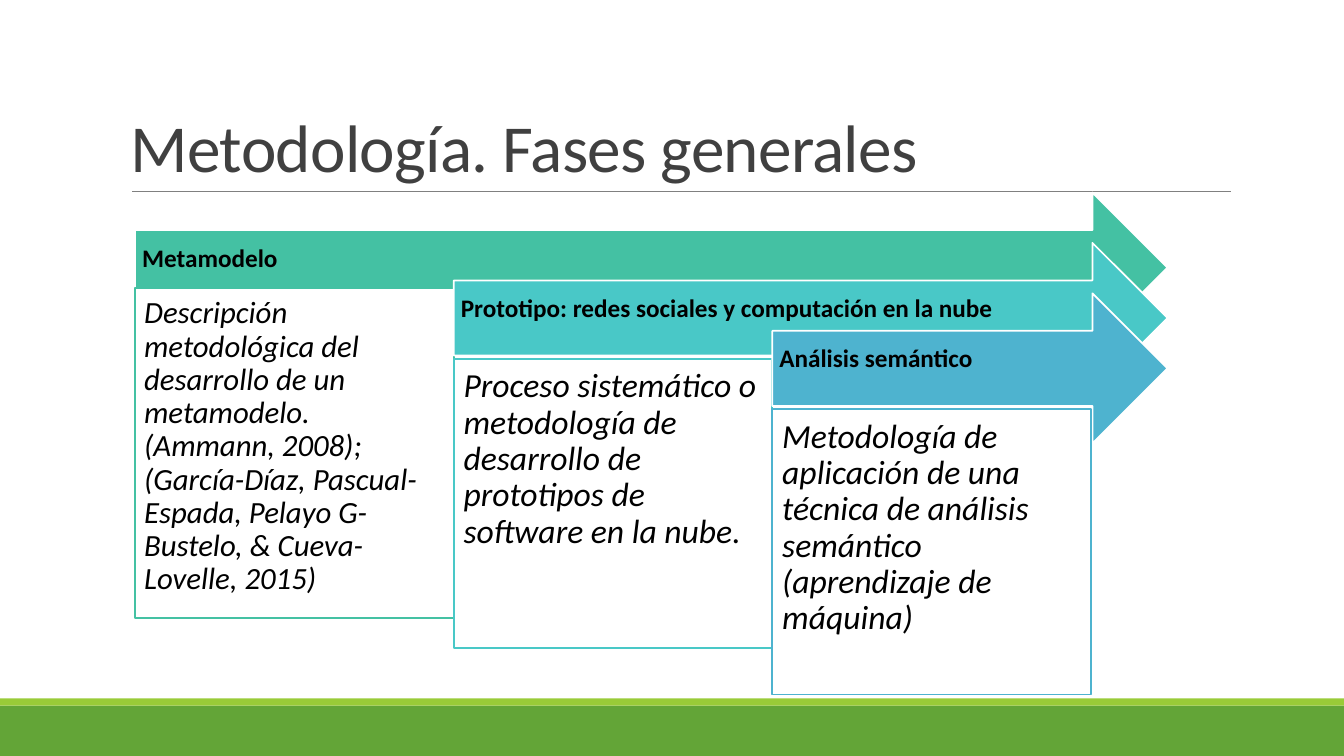
from dataclasses import dataclass

from lxml.etree import SubElement
from pptx import Presentation
from pptx.dml.color import RGBColor
from pptx.enum.shapes import MSO_CONNECTOR, MSO_SHAPE as Shape
from pptx.enum.text import MSO_ANCHOR as Anchor, PP_ALIGN as Align
from pptx.oxml.ns import qn
from pptx.util import Inches, Pt

WIDTH, HEIGHT = 13.33, 7.5
LEFT, COLUMN = 1.34, 3.16
TOP, ROW = 1.91, 0.5
ARROW_RIGHT, ARROW_HEIGHT = 11.58, 1.49


@dataclass
class Phase:
    name: str
    detail: str
    color: str
    box_drop: float
    box_height: float
    size: int = 24
    inset: float = 0.1


PHASES = [
    Phase("Metamodelo",
          "Descripción metodológica del desarrollo de un metamodelo. (Ammann, 2008); "
          "(García-Díaz, Pascual-Espada, Pelayo G-Bustelo, & Cueva-Lovelle, 2015)",
          "44C1A3", 0.95, 3.27, size=22, inset=0.09),
    Phase("Prototipo: redes sociales y computación en la nube",
          "Proceso sistemático o metodología de desarrollo de prototipos de software en la nube.",
          "49C8C7", 1.15, 2.87),
    Phase("Análisis semántico",
          "Metodología de aplicación de una técnica de análisis semántico "
          "(aprendizaje de máquina)",
          "4EB3CF", 1.15, 2.83),
]


def rgb(color: str) -> RGBColor:
    return RGBColor.from_string(color)


def add_block(s, kind, x: float, y: float, w: float, h: float, fill: str, line: str = ""):
    """Add a flat preset shape; without a line colour it has no outline."""
    sp = s.shapes.add_shape(kind, Inches(x), Inches(y), Inches(w), Inches(h))
    sp.shadow.inherit = False
    sp.fill.solid()
    sp.fill.fore_color.rgb = rgb(fill)
    if line:
        sp.line.color.rgb = rgb(line)
        sp.line.width = Pt(1.25)
    else:
        sp.line.fill.background()
    return sp


def write(sp, text: str, *, size: float, color: str = "000000", bold: bool = False,
          italic: bool = False, anchor=Anchor.TOP, spacing: float = 0.9,
          insets: tuple = (0.1, 0.05, 0.1, 0.05), tracking: int = 0) -> None:
    tf = sp.text_frame
    tf.word_wrap = True
    tf.vertical_anchor = anchor
    tf.margin_left, tf.margin_top, tf.margin_right, tf.margin_bottom = map(Inches, insets)
    p = tf.paragraphs[0]
    p.alignment = Align.LEFT
    p.line_spacing = spacing
    r = p.add_run()
    r.text = text
    r.font.name = "Calibri"
    r.font.size = Pt(size)
    r.font.bold = bold
    r.font.italic = italic
    r.font.color.rgb = rgb(color)
    if tracking:
        r.font._element.set("spc", str(tracking))


def add_rule(s, x1: float, x2: float, y: float, color: str) -> None:
    line = s.shapes.add_connector(MSO_CONNECTOR.STRAIGHT, *map(Inches, (x1, y, x2, y)))
    line.line.color.rgb = rgb(color)
    line.line.width = Pt(0.5)
    SubElement(line._element.spPr, qn("a:effectLst"))


def add_phase(s, index: int, phase: Phase) -> None:
    x, y = LEFT + index * COLUMN, TOP + index * ROW
    arrow = add_block(s, Shape.RIGHT_ARROW, x, y, ARROW_RIGHT - x, ARROW_HEIGHT,
                      phase.color, "FFFFFF")
    write(arrow, phase.name, size=18, bold=True, anchor=Anchor.MIDDLE,
          insets=(0.07, 0.07, 0.28, 0.24))
    box = add_block(s, Shape.RECTANGLE, x, y + phase.box_drop, COLUMN, phase.box_height,
                    "FFFFFF", phase.color)
    write(box, phase.detail, size=phase.size, italic=True, insets=(phase.inset,) * 4)


def main() -> None:
    prs = Presentation()
    prs.slide_width, prs.slide_height = Inches(WIDTH), Inches(HEIGHT)
    s = prs.slides.add_slide(prs.slide_layouts[6])

    add_block(s, Shape.RECTANGLE, 0, 7, WIDTH, 0.5, "63A537")
    add_block(s, Shape.RECTANGLE, 0, 6.93, WIDTH, 0.07, "99CB38")
    add_rule(s, 1.31, 12.21, 1.9, "808080")

    title = s.shapes.add_textbox(*map(Inches, (1.2, 0.31, 11, 1.59)))
    write(title, "Metodología. Fases generales", size=48, color="404040",
          anchor=Anchor.BOTTOM, spacing=0.85, tracking=-50)

    for index, phase in enumerate(PHASES):
        add_phase(s, index, phase)
    prs.save("out.pptx")


if __name__ == "__main__":
    main()
